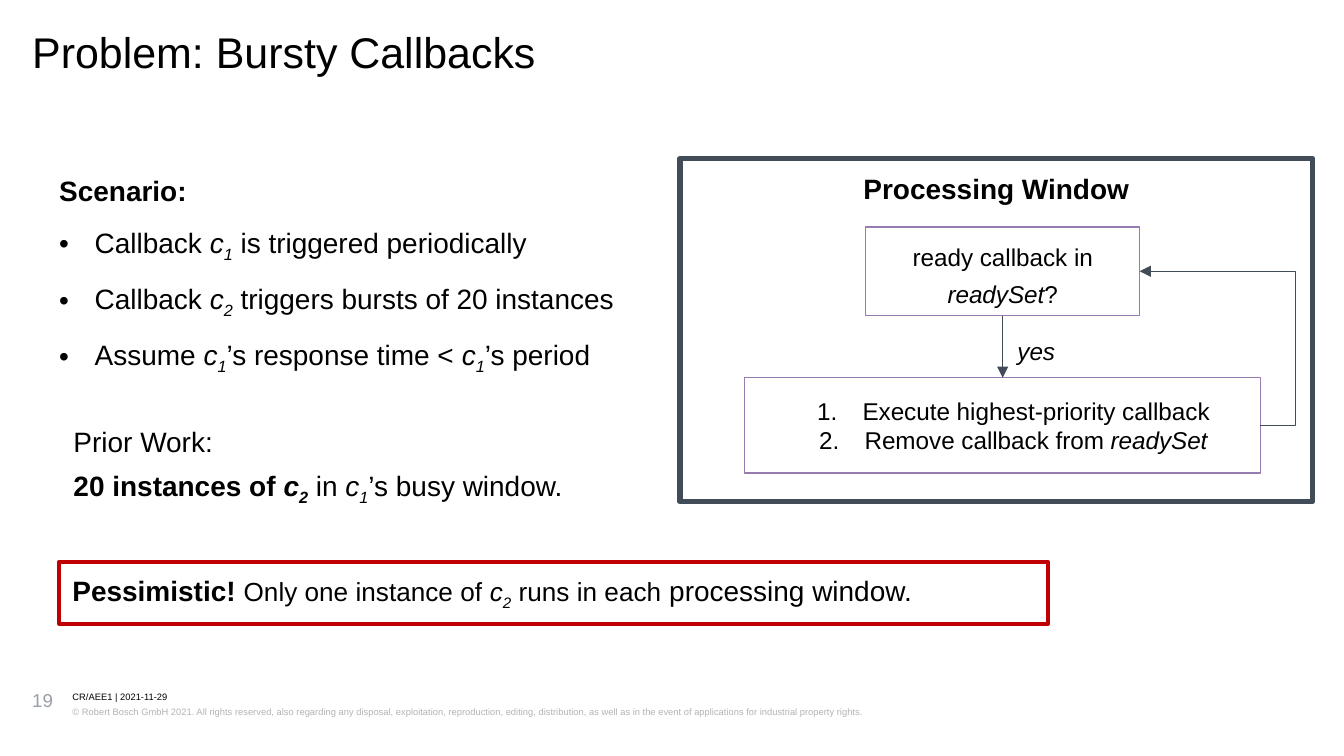
import pptx
import pptx.dml.color
import pptx.enum.shapes
import pptx.enum.text
import pptx.oxml.ns
import pptx.util
from lxml import etree

Cm = pptx.util.Cm
Pt = pptx.util.Pt
Align = pptx.enum.text.PP_ALIGN
Anchor = pptx.enum.text.MSO_ANCHOR
Connector = pptx.enum.shapes.MSO_CONNECTOR

COLORS = {
    "text": "000000",
    "copyright": "B2B3B5",
    "number": "999FA6",
    "frame": "424C58",
    "step": "967CB1",
    "warning": "C00000",
}
WIDE = 1.28


def rgb(name):
    return pptx.dml.color.RGBColor.from_string(COLORS[name])


def add_element(parent, tag, **attributes):
    return etree.SubElement(parent, pptx.oxml.ns.qn(tag), **attributes)


def write(paragraph, text, size=15, color="text", bold=False, italic=False, subscript=False):
    run = paragraph.add_run()
    run.text = text
    run.font.name = "Arial"
    run.font.size = Pt(size)
    run.font.bold = bold
    run.font.italic = italic
    run.font.color.rgb = rgb(color)
    if subscript:
        run.font._element.set("baseline", "-25000")


def write_sentence(paragraph, parts, **style):
    for part in parts:
        if isinstance(part, int):
            write(paragraph, "c", italic=True, **style)
            write(paragraph, str(part), italic=True, subscript=True, **style)
        else:
            write(paragraph, part, **style)


def format_paragraph(paragraph, spacing=None, before=None, align=None, left=0, hanging=0, bullet=None):
    properties = paragraph._p.get_or_add_pPr()
    if left:
        properties.set("marL", str(Cm(left)))
        properties.set("indent", str(-Cm(hanging)))
    if bullet:
        color = add_element(properties, "a:buClr")
        add_element(color, "a:srgbClr", val=COLORS["text"])
        if bullet == "number":
            add_element(properties, "a:buFont", typeface="Arial")
            add_element(properties, "a:buAutoNum", type="arabicPeriod")
        else:
            add_element(properties, "a:buFont", typeface="Arial")
            add_element(properties, "a:buChar", char=bullet)
    if spacing:
        paragraph.line_spacing = spacing
    if before:
        paragraph.space_before = Pt(before)
    if align is not None:
        paragraph.alignment = align


def prepare_frame(shape, inset=0, anchor=Anchor.TOP):
    frame = shape.text_frame
    frame.word_wrap = True
    frame.vertical_anchor = anchor
    frame.margin_left = frame.margin_right = Cm(inset)
    frame.margin_top = frame.margin_bottom = Cm(inset)
    return frame


def add_text_box(slide, left, top, width, height):
    shape = slide.shapes.add_textbox(Cm(left), Cm(top), Cm(width), Cm(height))
    return prepare_frame(shape)


def add_label(slide, text, left, top, width, height, spacing=None, **style):
    paragraph = add_text_box(slide, left, top, width, height).paragraphs[0]
    format_paragraph(paragraph, spacing=spacing)
    write(paragraph, text, **style)


def add_box(slide, left, top, width, height, color, weight, inset=0, anchor=Anchor.MIDDLE):
    shape = slide.shapes.add_shape(
        pptx.enum.shapes.MSO_SHAPE.RECTANGLE, Cm(left), Cm(top), Cm(width), Cm(height))
    shape.shadow.inherit = False
    shape.fill.background()
    shape.line.color.rgb = rgb(color)
    shape.line.width = Pt(weight)
    return prepare_frame(shape, inset, anchor)


def add_arrow(slide, kind, start, end):
    connector = slide.shapes.add_connector(kind, *map(Cm, start + end))
    connector.line.color.rgb = rgb("frame")
    connector.line.width = Pt(0.75)
    add_element(connector.line._get_or_add_ln(), "a:tailEnd", type="triangle")
    add_element(connector._element.spPr, "a:effectLst")
    return connector


def add_scenario(slide):
    frame = add_text_box(slide, 1.12, 3.1, 14.71, 4.47)
    heading = frame.paragraphs[0]
    format_paragraph(heading, spacing=WIDE, align=Align.LEFT)
    write(heading, "Scenario:", bold=True)
    for parts in (
        ["Callback ", 1, " is triggered periodically"],
        ["Callback ", 2, " triggers bursts of 20 instances"],
        ["Assume ", 1, "’s response time < ", 1, "’s period"],
    ):
        paragraph = frame.add_paragraph()
        format_paragraph(paragraph, spacing=WIDE, before=4, left=0.67, hanging=0.67, bullet="•")
        write_sentence(paragraph, parts)


def add_prior_work(slide):
    frame = add_text_box(slide, 1.14, 7.85, 18.69, 1.83)
    heading, result = frame.paragraphs[0], frame.add_paragraph()
    for paragraph in (heading, result):
        format_paragraph(paragraph, spacing=WIDE, left=0.25)
    write(heading, "Prior Work:")
    write_sentence(result, ["20 instances of ", 2], bold=True)
    write_sentence(result, [" in ", 1, "’s busy window."])


def add_verdict(slide):
    paragraph = add_box(slide, 1.12, 10.62, 18.69, 1.17, "warning", 2.25).paragraphs[0]
    format_paragraph(paragraph, align=Align.LEFT, left=0.25)
    write(paragraph, "Pessimistic! ", bold=True)
    write_sentence(paragraph, ["Only one instance of ", 2, " runs in each"], size=14)
    write(paragraph, " processing window.")


def add_processing_window(slide):
    frame = add_box(slide, 12.85, 3, 11.96, 6.48, "frame", 3, inset=0.25, anchor=Anchor.TOP)
    format_paragraph(frame.paragraphs[0], align=Align.CENTER)
    write(frame.paragraphs[0], "Processing Window", bold=True)

    question = add_box(slide, 16.36, 4.29, 5.18, 1.68, "step", 0.75).paragraphs[0]
    format_paragraph(question, spacing=WIDE, align=Align.CENTER)
    write(question, "ready callback in ", size=13)
    write(question, "readySet", size=13, italic=True)
    write(question, "?", size=13)

    steps = add_box(slide, 14.07, 7.14, 9.75, 1.8, "step", 0.75)
    execute, remove = steps.paragraphs[0], steps.add_paragraph()
    for paragraph in (execute, remove):
        format_paragraph(paragraph, align=Align.CENTER, left=1.27, hanging=0.86, bullet="number")
    write(execute, "Execute highest-priority callback", size=13)
    write(remove, "Remove callback from ", size=13)
    write(remove, "readySet", size=13, italic=True)

    add_arrow(slide, Connector.STRAIGHT, (18.95, 5.97), (18.95, 7.14))
    loop = add_arrow(slide, Connector.ELBOW, (23.82, 8.04), (21.54, 5.13))
    geometry = loop._element.spPr.find(pptx.oxml.ns.qn("a:prstGeom"))
    adjustments = geometry.get_or_add_avLst()
    add_element(adjustments, "a:gd", name="adj1", fmla="val -29100")
    add_label(slide, "yes", 19.23, 6.2, 0.91, 0.69, spacing=WIDE, size=13, italic=True)


def add_footer(slide):
    add_label(slide, "CR/AEE1 | 2021-11-29", 1.37, 13.06, 21.18, 0.25, spacing=1.07, size=5)
    add_label(
        slide,
        "© Robert Bosch GmbH 2021. All rights reserved, also regarding any disposal, "
        "exploitation, reproduction, editing, distribution, as well as in the event of "
        "applications for industrial property rights.",
        1.37, 13.31, 21.18, 0.51, spacing=1.2, size=5, color="copyright")
    add_label(slide, "19", 0.61, 13.03, 0.66, 0.94, size=10, color="number")


def main():
    presentation = pptx.Presentation()
    presentation.slide_width = Cm(25.4)
    presentation.slide_height = Cm(14.29)
    slide = presentation.slides.add_slide(presentation.slide_layouts[6])
    add_footer(slide)
    add_label(slide, "Problem: Bursty Callbacks", 0.61, 0.61, 24.21, 0.89, spacing=0.89, size=23)
    add_scenario(slide)
    add_prior_work(slide)
    add_verdict(slide)
    add_processing_window(slide)
    presentation.save("out.pptx")


if __name__ == "__main__":
    main()
